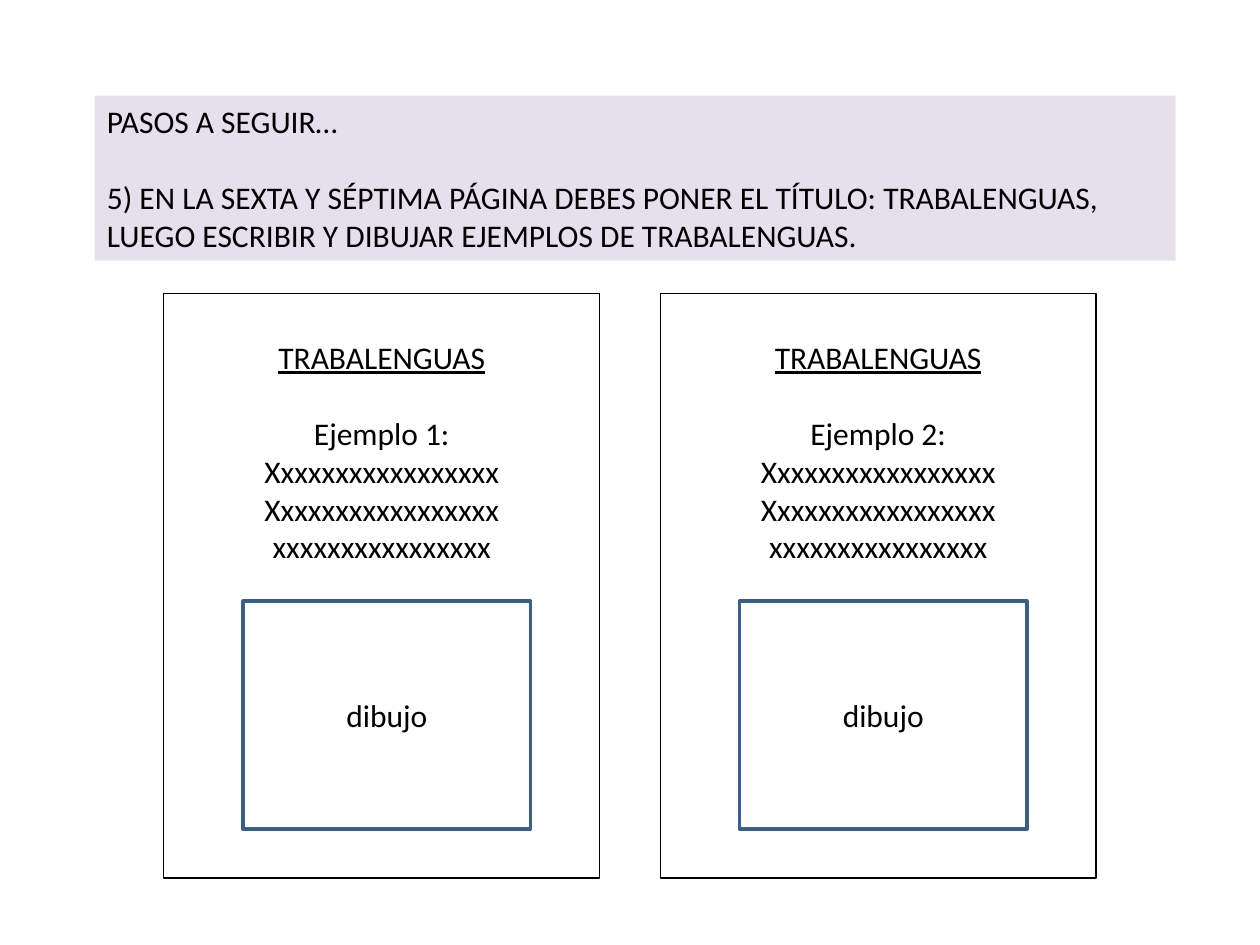
from pptx import Presentation
from pptx.dml.color import RGBColor
from pptx.enum.shapes import MSO_SHAPE as Shape
from pptx.enum.text import MSO_ANCHOR as Anchor, PP_ALIGN as Align
from pptx.util import Inches, Pt

STEPS = [
    "PASOS A SEGUIR…",
    "5) EN LA SEXTA Y SÉPTIMA PÁGINA DEBES PONER EL TÍTULO: TRABALENGUAS, "
    "LUEGO ESCRIBIR Y DIBUJAR EJEMPLOS DE TRABALENGUAS.",
]
PAGE_TITLE = "TRABALENGUAS"
EXAMPLES = ["Ejemplo 1:", "Ejemplo 2:"]
VERSES = ["Xxxxxxxxxxxxxxxxx", "Xxxxxxxxxxxxxxxxx", "xxxxxxxxxxxxxxxx"]
DRAWING = "dibujo"

PAGE_LEFT, PAGE_TOP, PAGE_WIDTH, PAGE_HEIGHT = 1.3, 2.33, 3.46, 4.64
PAGE_STEP = 3.94
DRAWING_INSET, DRAWING_TOP = 0.63, 4.77
LINE_GAP = 22


def color(value):
    return RGBColor.from_string(value)


def add_panel(slide, box, lines, fill, border=None, align=Align.CENTER,
              anchor=Anchor.TOP, margin_top=0.05):
    panel = slide.shapes.add_shape(Shape.RECTANGLE, *map(Inches, box))
    panel.shadow.inherit = False
    panel.fill.solid()
    panel.fill.fore_color.rgb = color(fill)
    if border:
        panel.line.color.rgb = color(border[0])
        panel.line.width = Pt(border[1])
    else:
        panel.line.fill.background()
    frame = panel.text_frame
    frame.word_wrap = True
    frame.vertical_anchor = anchor
    frame.margin_top = Inches(margin_top)
    frame.text = "\n".join(lines)
    for paragraph in frame.paragraphs:
        paragraph.alignment = align
        font = paragraph.runs[0].font
        font.name = "Calibri"
        font.size = Pt(18)
        font.color.rgb = color("000000")
    return frame.paragraphs


def add_page(slide, left, example):
    title, heading, *_ = add_panel(
        slide, (left, PAGE_TOP, PAGE_WIDTH, PAGE_HEIGHT),
        [PAGE_TITLE, example, *VERSES], "FFFFFF", ("000000", 0.75),
        margin_top=0.35)
    title.runs[0].font.underline = True
    heading.space_before = Pt(LINE_GAP)
    add_panel(slide, (left + DRAWING_INSET, DRAWING_TOP, 2.28, 1.81),
              [DRAWING], "FFFFFF", ("3A5F8C", 2), anchor=Anchor.MIDDLE)


def main():
    deck = Presentation()
    deck.slide_width, deck.slide_height = Inches(10), Inches(7.5)
    slide = deck.slides.add_slide(deck.slide_layouts[6])
    steps = add_panel(slide, (0.75, 0.76, 8.58, 1.31), STEPS, "E6E0EC",
                      align=Align.LEFT)
    steps[1].space_before = Pt(LINE_GAP)
    for index, example in enumerate(EXAMPLES):
        add_page(slide, PAGE_LEFT + index * PAGE_STEP, example)
    deck.save("out.pptx")


if __name__ == "__main__":
    main()
